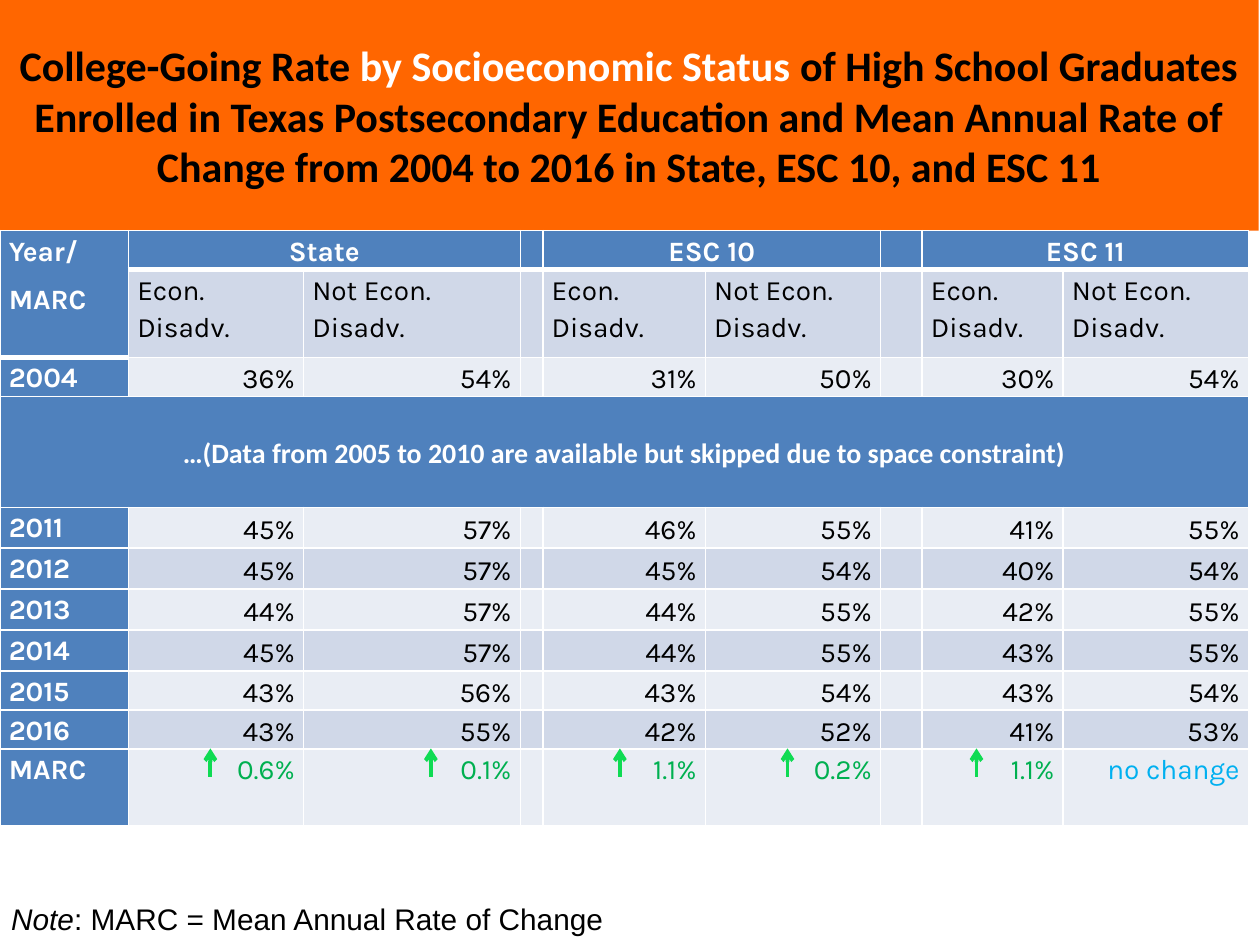
from lxml.etree import SubElement
from pptx import Presentation
from pptx.dml.color import RGBColor
from pptx.enum.shapes import MSO_CONNECTOR as Connector
from pptx.enum.text import MSO_ANCHOR as Anchor, PP_ALIGN as Align
from pptx.oxml.ns import qn
from pptx.util import Inches, Pt

WIDTH, HEIGHT = 10, 7.5
COLORS = {
    "banner": "FF6600", "header": "4F81BD", "band": "D0D8E8", "light": "E9EDF4",
    "white": "FFFFFF", "black": "000000", "rise": "00B050", "steady": "00B0F0",
    "arrow": "0FDB53",
}
TITLE = [
    ("College-Going Rate ", "black"),
    ("by Socioeconomic Status ", "white"),
    ("of High School Graduates Enrolled in Texas Postsecondary Education and "
     "Mean Annual Rate of Change from 2004 to 2016 in State, ESC 10, and ESC 11", "black"),
]
SKIPPED = "…(Data from 2005 to 2010 are available but skipped due to space constraint)"
TABLE_TOP = 0.244
COLUMNS = [1.02, 1.39, 1.72, 0.18, 1.29, 1.39, 0.33, 1.12, 1.47]
ROWS = [0.31, 0.69, 0.31, 0.88] + [0.325] * 4 + [0.31, 0.31, 0.61]
REGIONS = {1: "State", 4: "ESC 10", 7: "ESC 11"}
VALUE_COLUMNS = [column for start in REGIONS for column in (start, start + 1)]
SKIPPED_ROW, MARC_ROW = 3, len(ROWS) - 1
RATES = {
    2: ("2004", [36, 54, 31, 50, 30, 54]),
    4: ("2011", [45, 57, 46, 55, 41, 55]),
    5: ("2012", [45, 57, 45, 54, 40, 54]),
    6: ("2013", [44, 57, 44, 55, 42, 55]),
    7: ("2014", [45, 57, 44, 55, 43, 55]),
    8: ("2015", [43, 56, 43, 54, 43, 54]),
    9: ("2016", [43, 55, 42, 52, 41, 53]),
}
CHANGES = ["0.6%", "0.1%", "1.1%", "0.2%", "1.1%", "no change"]
ARROW_SHARES = [0.167, 0.342, 0.492, 0.625, 0.775]


def color(name):
    return RGBColor.from_string(COLORS[name])


def across(share):
    return Inches(WIDTH * share)


def down(share):
    return Inches(HEIGHT * share)


def style_font(font, name, size, tint, bold=False):
    font.name, font.size, font.bold = name, Pt(size), bold
    font.color.rgb = color(tint)


def add_title(slide):
    title = slide.shapes.title
    title.left, title.top = across(-0.001), 0
    title.width, title.height = across(1), down(TABLE_TOP)
    title.fill.solid()
    title.fill.fore_color.rgb = color("banner")
    title.text_frame.vertical_anchor = Anchor.MIDDLE
    paragraph = title.text_frame.paragraphs[0]
    paragraph.alignment = Align.CENTER
    for words, tint in TITLE:
        run = paragraph.add_run()
        run.text = words
        style_font(run.font, "Calibri", 24, tint, True)


def add_note(slide):
    note = slide.shapes.add_textbox(across(-0.001), down(0.947), across(1), down(0.052))
    note.text_frame.word_wrap = True
    paragraph = note.text_frame.paragraphs[0]
    style_font(paragraph.font, "Arial", 17, "black")
    for words, italic in [("Note", True), (": MARC = Mean Annual Rate of Change", False)]:
        run = paragraph.add_run()
        run.text = words
        run.font.italic = italic


def set_borders(cell, bottom):
    properties = cell._tc.get_or_add_tcPr()
    for side, points in [("lnL", 1), ("lnR", 1), ("lnT", 1), ("lnB", bottom)]:
        border = SubElement(properties, qn(f"a:{side}"), w=str(Pt(points)))
        fill = SubElement(border, qn("a:solidFill"))
        SubElement(fill, qn("a:srgbClr"), val=COLORS["white"])


def prepare_cell(cell, fill, bottom):
    cell.margin_left = cell.margin_right = Inches(0.07)
    cell.margin_top = cell.margin_bottom = 0
    set_borders(cell, bottom)
    cell.fill.solid()
    cell.fill.fore_color.rgb = color(fill)
    style_font(cell.text_frame.paragraphs[0].font, "Karla", 16, "black")


def write(cell, words, tint="black", bold=False, align=Align.LEFT, anchor=Anchor.TOP,
          before=0, after=0, font="Karla"):
    cell.text = words
    cell.vertical_anchor = anchor
    for paragraph in cell.text_frame.paragraphs:
        paragraph.alignment = align
        paragraph.line_spacing = 1.15
        paragraph.space_before, paragraph.space_after = Pt(before), Pt(after)
        style_font(paragraph.font, font, 16, tint, bold)


def fill_name(row, column):
    if column == 0 or row in (0, SKIPPED_ROW):
        return "header"
    return "band" if row % 2 else "light"


def write_headings(table):
    table.cell(0, 0).merge(table.cell(1, 0))
    write(table.cell(0, 0), "Year/\nMARC", "white", True, before=6)
    table.cell(0, 0).text_frame.paragraphs[1].space_after = Pt(6)
    for column, region in REGIONS.items():
        table.cell(0, column).merge(table.cell(0, column + 1))
        write(table.cell(0, column), region, "white", True, Align.CENTER, before=6)
        write(table.cell(1, column), "Econ. Disadv.", after=6)
        write(table.cell(1, column + 1), "Not Econ. Disadv.", after=6)
    table.cell(SKIPPED_ROW, 0).merge(table.cell(SKIPPED_ROW, len(COLUMNS) - 1))
    write(table.cell(SKIPPED_ROW, 0), SKIPPED, "white", True, Align.CENTER,
          Anchor.MIDDLE, font="Calibri")


def write_rates(table):
    for row, (year, rates) in RATES.items():
        before = 6 if year == "2004" else 0
        write(table.cell(row, 0), year, "white", True, before=before)
        for column, rate in zip(VALUE_COLUMNS, rates):
            write(table.cell(row, column), f"{rate}%", align=Align.RIGHT,
                  anchor=Anchor.MIDDLE, before=before)
    write(table.cell(MARC_ROW, 0), "MARC", "white", True)
    for column, change in zip(VALUE_COLUMNS, CHANGES):
        tint = "rise" if change.endswith("%") else "steady"
        write(table.cell(MARC_ROW, column), change, tint, align=Align.RIGHT)


def add_rate_table(slide):
    frame = slide.shapes.add_table(len(ROWS), len(COLUMNS), 0, down(TABLE_TOP),
                                   Inches(sum(COLUMNS)), Inches(sum(ROWS)))
    table = frame.table
    table.first_row = table.horz_banding = False
    for column, width in zip(table.columns, COLUMNS):
        column.width = Inches(width)
    for row, height in zip(table.rows, ROWS):
        row.height = Inches(height)
    for row in range(len(ROWS)):
        for column in range(len(COLUMNS)):
            heading_edge = row == 0 or (row, column) == (1, 0)
            prepare_cell(table.cell(row, column), fill_name(row, column),
                         3 if heading_edge else 1)
    write_headings(table)
    write_rates(table)


def add_rise_arrow(slide, share):
    tip = down(TABLE_TOP) + Inches(sum(ROWS[:MARC_ROW]))
    arrow = slide.shapes.add_connector(Connector.STRAIGHT, across(share),
                                       tip + down(0.03), across(share), tip)
    arrow.line.color.rgb = color("arrow")
    arrow.line.width = Pt(2.25)
    SubElement(arrow.line._get_or_add_ln(), qn("a:tailEnd"), type="arrow")
    SubElement(arrow._element.spPr, qn("a:effectLst"))


def main():
    deck = Presentation()
    deck.slide_width, deck.slide_height = Inches(WIDTH), Inches(HEIGHT)
    slide = deck.slides.add_slide(deck.slide_layouts[5])
    add_title(slide)
    add_note(slide)
    add_rate_table(slide)
    for share in ARROW_SHARES:
        add_rise_arrow(slide, share)
    deck.save("out.pptx")


if __name__ == "__main__":
    main()
